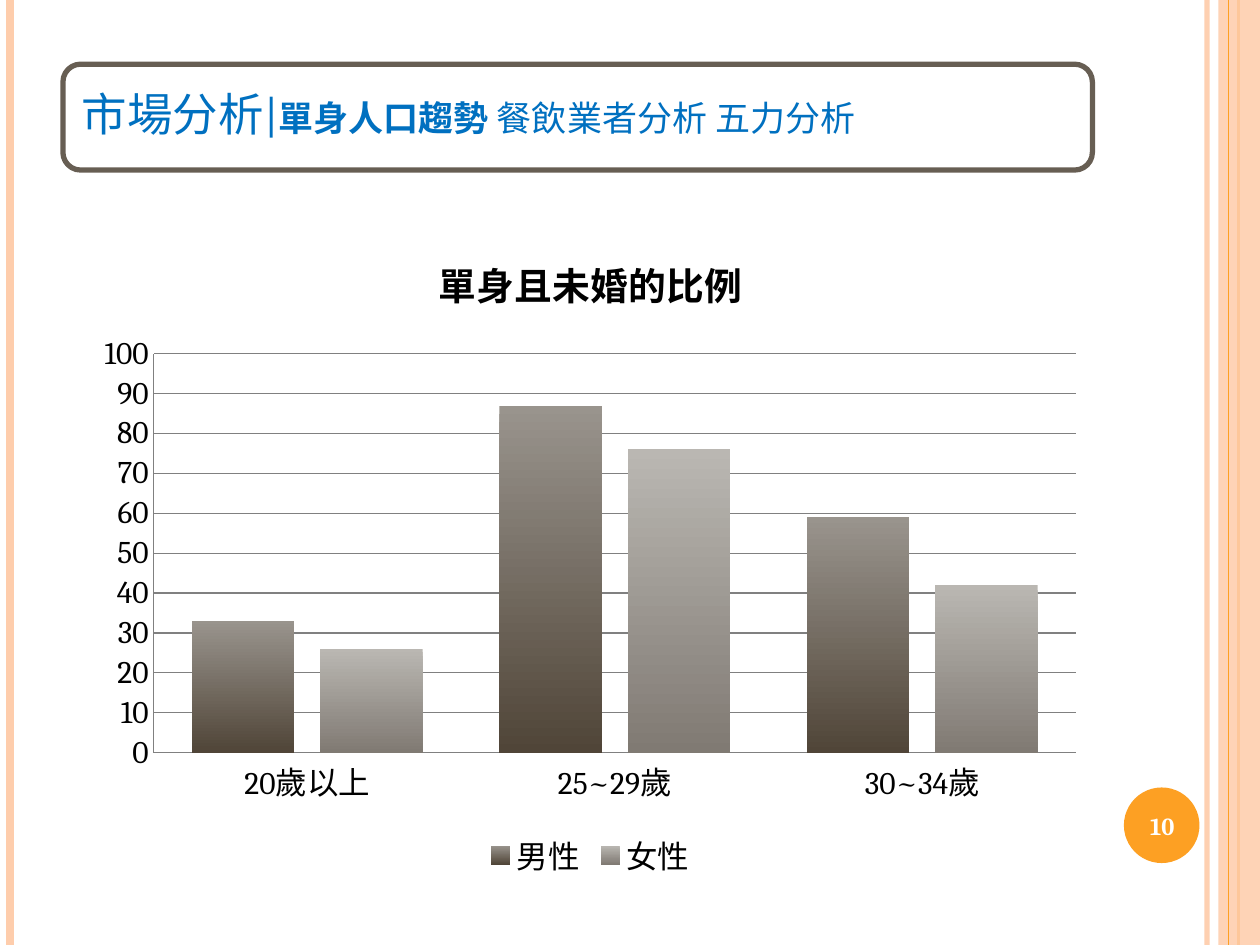
"""Build the market analysis slide on the share of single, unmarried people."""
from dataclasses import dataclass

from lxml import etree
from pptx import Presentation
from pptx import util as u
from pptx.chart.data import CategoryChartData
from pptx.dml.color import RGBColor
from pptx.enum import chart as ch, shapes, text
from pptx.oxml.ns import qn

EMU_PER_PX = 9144
WIDTH, HEIGHT = 1000, 750
FONT = "Cambria"
COLORS = {
    "peach": "FECDAC", "orange": "FDA023", "brown": "675E53", "blue": "0070C0",
    "white": "FFFFFF", "black": "000000", "grid": "808080",
    "male_top": "99948D", "male_bottom": "504538",
    "female_top": "BAB7B2", "female_bottom": "807A73",
}


@dataclass(frozen=True)
class Box:
    left: int
    top: int
    width: int
    height: int

    def emu(self) -> list[u.Emu]:
        return [px(n) for n in (self.left, self.top, self.width, self.height)]


@dataclass(frozen=True)
class Stripe:
    x: int
    color: str
    weight: float
    opacity: int = 100


@dataclass(frozen=True)
class Phrase:
    words: str
    size: int
    color: str
    bold: bool = False


@dataclass(frozen=True)
class Group:
    name: str
    shares: tuple[int, ...]
    top: str
    bottom: str


BACK_STRIPES = (Stripe(958, "peach", 3, 93), Stripe(8, "peach", 4.5),
                Stripe(983, "orange", 1.5))
FRONT_STRIPE = Stripe(975, "orange", 0.75)
HEADING = (Phrase("市場分析|", 26, "blue"), Phrase("單身人口趨勢 ", 20, "blue", True),
           Phrase("餐飲業者分析 五力分析", 20, "blue"))
AGES = ("20歲以上", "25~29歲", "30~34歲")
GROUPS = (Group("男性", (33, 87, 59), "male_top", "male_bottom"),
          Group("女性", (26, 76, 42), "female_top", "female_bottom"))


def px(length: int) -> u.Emu:
    return u.Emu(length * EMU_PER_PX)


def rgb(name: str) -> RGBColor:
    return RGBColor.from_string(COLORS[name])


def set_opacity(fill, percent: int) -> None:
    color = fill._xPr.find(qn("a:solidFill"))[0]
    etree.SubElement(color, qn("a:alpha"), val=str(percent * 1000))


def add_stripe(slide, stripe: Stripe) -> None:
    line = slide.shapes.add_connector(
        shapes.MSO_CONNECTOR.STRAIGHT, px(stripe.x), 0, px(stripe.x), px(HEIGHT))
    line.line.color.rgb = rgb(stripe.color)
    line.line.width = u.Pt(stripe.weight)
    if stripe.opacity < 100:
        set_opacity(line.line.fill, stripe.opacity)
    etree.SubElement(line._element.spPr, qn("a:effectLst"))


def add_panel(slide, kind, box: Box, fill: str, outline: str = ""):
    panel = slide.shapes.add_shape(kind, *box.emu())
    panel.shadow.inherit = False
    panel.fill.solid()
    panel.fill.fore_color.rgb = rgb(fill)
    if outline:
        panel.line.color.rgb = rgb(outline)
        panel.line.width = u.Pt(3)
    else:
        panel.line.fill.background()
    return panel


def add_words(slide, box: Box, phrases: tuple[Phrase, ...], align, inset: int):
    frame = slide.shapes.add_textbox(*box.emu()).text_frame
    frame.word_wrap = True
    frame.vertical_anchor = text.MSO_ANCHOR.MIDDLE
    frame.margin_left = frame.margin_right = px(inset)
    frame.margin_top = frame.margin_bottom = px(inset)
    paragraph = frame.paragraphs[0]
    paragraph.alignment = align
    for phrase in phrases:
        run = paragraph.add_run()
        run.text = phrase.words
        style_font(run.font, phrase.size, phrase.color, phrase.bold)
    return paragraph


def style_font(font, size: float, color: str, bold: bool = False) -> None:
    font.name = FONT
    font.size = u.Pt(size)
    font.bold = bold
    font.color.rgb = rgb(color)


def add_share_chart(slide, box: Box) -> None:
    shares = CategoryChartData()
    shares.categories = AGES
    for group in GROUPS:
        shares.add_series(group.name, group.shares)
    chart = slide.shapes.add_chart(
        ch.XL_CHART_TYPE.COLUMN_CLUSTERED, *box.emu(), shares).chart
    style_font(chart.font, 18, "black")

    chart.has_title = True
    title = chart.chart_title.text_frame
    title.text = "單身且未婚的比例"
    style_font(title.paragraphs[0].runs[0].font, 21.6, "black", True)
    chart.has_legend = True
    chart.legend.position = ch.XL_LEGEND_POSITION.BOTTOM
    chart.legend.include_in_layout = False

    ages, percent = chart.category_axis, chart.value_axis
    for axis in (ages, percent):
        axis.major_tick_mark = ch.XL_TICK_MARK.NONE
        axis.format.line.color.rgb = rgb("grid")
    percent.minimum_scale, percent.maximum_scale, percent.major_unit = 0, 100, 10
    percent.major_gridlines.format.line.color.rgb = rgb("grid")

    plot = chart.plots[0]
    plot.gap_width, plot.overlap = 75, -25
    plot.vary_by_categories = False
    for group, columns in zip(GROUPS, plot.series):
        fill = columns.format.fill
        fill.gradient()
        fill.gradient_angle = 270
        for stop, color in zip(fill.gradient_stops, (group.top, group.bottom)):
            stop.color.rgb = rgb(color)


def main() -> None:
    deck = Presentation()
    deck.slide_width, deck.slide_height = px(WIDTH), px(HEIGHT)
    slide = deck.slides.add_slide(deck.slide_layouts[6])

    for stripe in BACK_STRIPES:
        add_stripe(slide, stripe)
    edge = add_panel(slide, shapes.MSO_SHAPE.RECTANGLE, Box(967, 0, 33, HEIGHT), "peach")
    set_opacity(edge.fill, 87)
    add_stripe(slide, FRONT_STRIPE)
    add_panel(slide, shapes.MSO_SHAPE.OVAL, Box(892, 625, 60, 60), "orange")
    add_panel(slide, shapes.MSO_SHAPE.ROUNDED_RECTANGLE, Box(50, 51, 817, 84),
              "white", "brown")

    heading = add_words(slide, Box(54, 55, 808, 76), HEADING, text.PP_ALIGN.LEFT, 11)
    heading.line_spacing = 0.9
    add_share_chart(slide, Box(67, 178, 803, 524))
    add_words(slide, Box(889, 627, 67, 57), (Phrase("10", 14, "white", True),),
              text.PP_ALIGN.CENTER, 5)
    deck.save("out.pptx")


if __name__ == "__main__":
    main()
